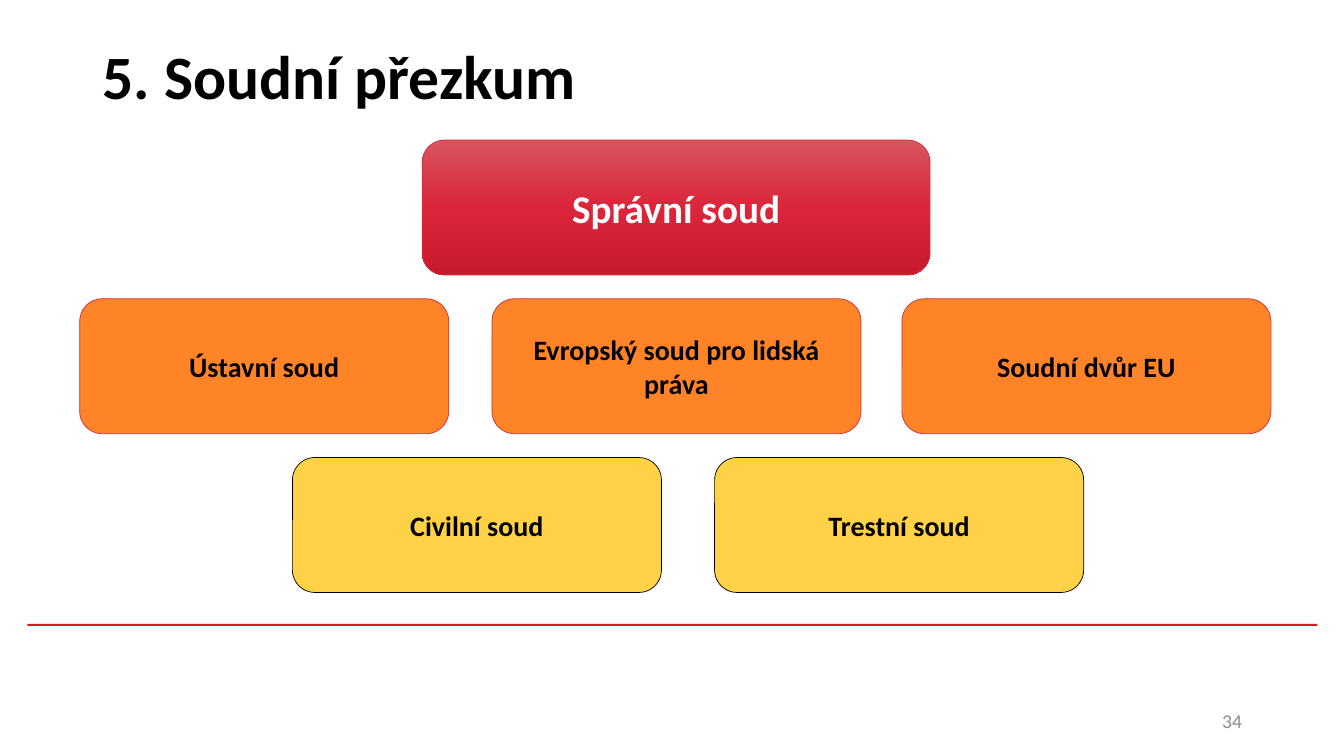
from copy import deepcopy
from typing import NamedTuple

from pptx import Presentation
from pptx.dml.color import RGBColor
from pptx.enum.shapes import MSO_SHAPE
from pptx.enum.text import MSO_ANCHOR, PP_ALIGN
from pptx.oxml.ns import qn
from pptx.util import Cm, Pt

FONT = "Calibri"
COLORS = {
    "black": "000000",
    "white": "FFFFFF",
    "grey": "8C8C8C",
    "rule": "CD1F21",
    "border": "D22D40",
    "orange": "FF8427",
    "yellow": "FFD147",
    "red_light": "D8555E",
    "red": "DA253A",
    "red_dark": "C9192E",
}
RED_GRADIENT = ("red_light", "red", "red_dark")
ROW_TOP, ROW_STEP, BOX_HEIGHT = 3.53, 4.0, 3.4


class Court(NamedTuple):
    name: str
    row: int
    left: float
    fill: str | tuple[str, ...]
    line: str = "border"
    width: float = 9.3
    size: int = 20
    color: str = "black"


COURTS = [
    Court("Správní soud", 0, 10.64, RED_GRADIENT, width=12.8, size=28, color="white"),
    Court("Ústavní soud", 1, 2.01, "orange"),
    Court("Evropský soud pro lidská práva", 1, 12.4, "orange"),
    Court("Soudní dvůr EU", 1, 22.73, "orange"),
    Court("Civilní soud", 2, 7.37, "yellow", "black"),
    Court("Trestní soud", 2, 18.01, "yellow", "black"),
]


def rgb(name: str) -> RGBColor:
    return RGBColor.from_string(COLORS[name])


def write(sp, text: str, size: int, color: str, align: PP_ALIGN, bold: bool = True) -> None:
    tf = sp.text_frame
    tf.word_wrap = True
    tf.vertical_anchor = MSO_ANCHOR.MIDDLE
    tf.text = text
    p = tf.paragraphs[0]
    p.alignment = align
    font = p.runs[0].font
    font.name, font.size, font.bold = FONT, Pt(size), bold
    font.color.rgb = rgb(color)


def fill_gradient(sp, colors: tuple[str, ...]) -> None:
    """Fill from top to bottom with three evenly spaced colours."""
    sp.fill.gradient()
    sp.fill.gradient_angle = 270
    first = next(sp._element.spPr.iter(qn("a:gs")))
    first.addnext(deepcopy(first))
    for i, (stop, color) in enumerate(zip(sp.fill.gradient_stops, colors)):
        stop.position = i / (len(colors) - 1)
        stop.color.rgb = rgb(color)


def add_court(s, court: Court) -> None:
    sp = s.shapes.add_shape(
        MSO_SHAPE.ROUNDED_RECTANGLE,
        Cm(court.left), Cm(ROW_TOP + court.row * ROW_STEP),
        Cm(court.width), Cm(BOX_HEIGHT),
    )
    sp.shadow.inherit = False
    if isinstance(court.fill, tuple):
        fill_gradient(sp, court.fill)
    else:
        sp.fill.solid()
        sp.fill.fore_color.rgb = rgb(court.fill)
    sp.line.color.rgb = rgb(court.line)
    sp.line.width = Pt(0.5)
    write(sp, court.name, court.size, court.color, PP_ALIGN.CENTER)


def main() -> None:
    prs = Presentation()
    prs.slide_width, prs.slide_height = Cm(33.87), Cm(19.05)
    s = prs.slides.add_slide(prs.slide_layouts[6])

    rule = s.shapes.add_shape(MSO_SHAPE.RECTANGLE, Cm(0.69), Cm(15.72), Cm(32.51), Cm(0.05))
    rule.shadow.inherit = False
    rule.fill.solid()
    rule.fill.fore_color.rgb = rgb("rule")
    rule.line.fill.background()

    title = s.shapes.add_textbox(Cm(2.34), Cm(0.05), Cm(29.21), Cm(3.68))
    write(title, "5. Soudní přezkum", 44, "black", PP_ALIGN.LEFT)
    number = s.shapes.add_textbox(Cm(23.93), Cm(17.65), Cm(7.62), Cm(1.02))
    write(number, "34", 14, "grey", PP_ALIGN.RIGHT, bold=False)

    for court in COURTS:
        add_court(s, court)

    prs.save("out.pptx")


if __name__ == "__main__":
    main()
